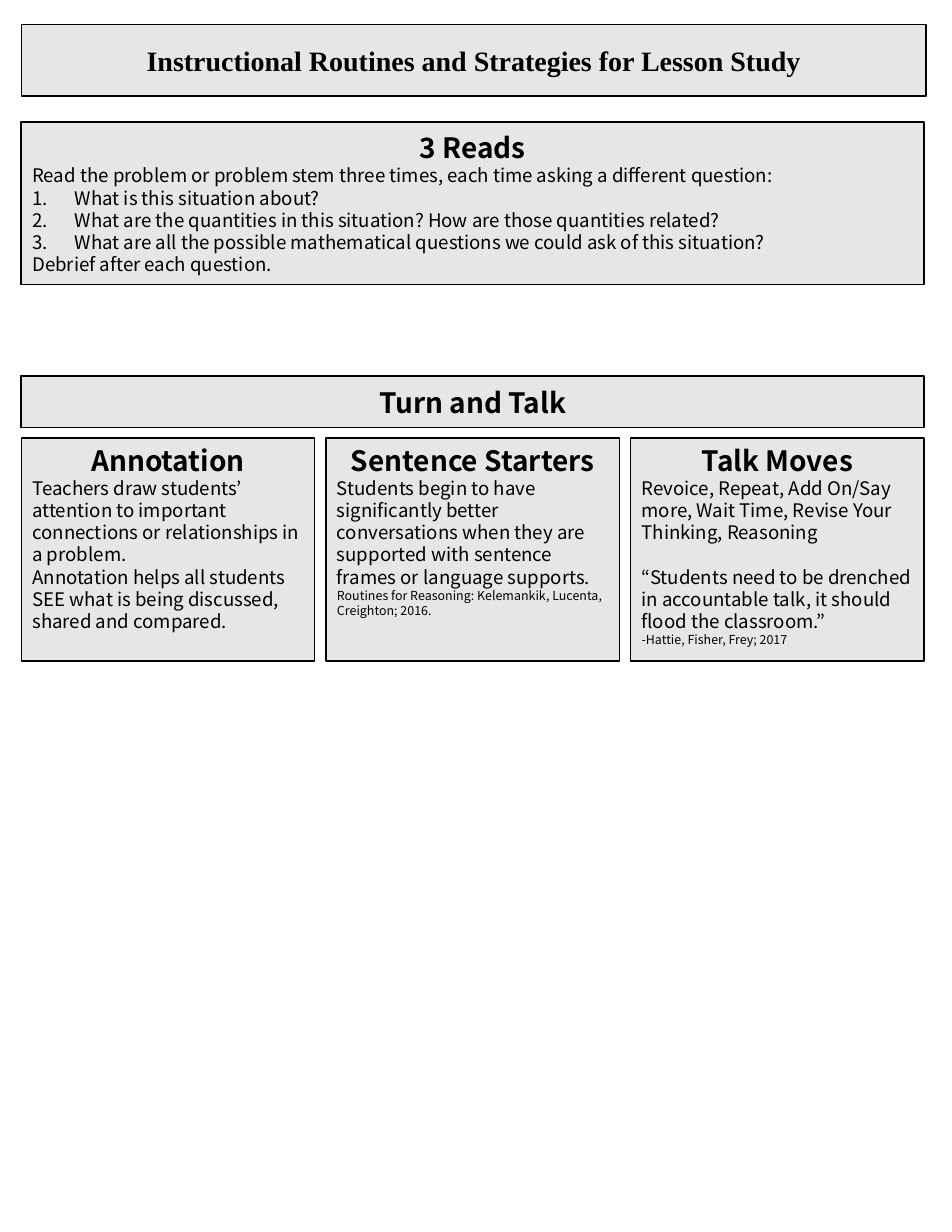
from lxml import etree
from pptx import Presentation
from pptx.dml.color import RGBColor
from pptx.enum.shapes import MSO_SHAPE
from pptx.enum.text import MSO_ANCHOR, PP_ALIGN
from pptx.oxml.ns import qn
from pptx.util import Inches, Pt

RECTANGLE = MSO_SHAPE.RECTANGLE
TOP, MIDDLE = MSO_ANCHOR.TOP, MSO_ANCHOR.MIDDLE
LEFT, CENTER = PP_ALIGN.LEFT, PP_ALIGN.CENTER

SANS, SERIF = "Noto Sans CJK KR", "Times New Roman"
LINE_RATIO = 1.19
MARGIN, WIDTH = 0.19, 8.06
CARD_TOP, CARD_WIDTH, CARD_HEIGHT = 3.91, 2.62, 1.99
CARD_STEP = (WIDTH - CARD_WIDTH) / 2

FORMATS = {
    "title": {"name": SERIF, "size": Pt(18), "bold": True},
    "heading": {"name": SANS, "size": Pt(18), "bold": True},
    "body": {"name": SANS, "size": Pt(12), "bold": False},
    "source": {"name": SANS, "size": Pt(8), "bold": False},
}
FORMATS["step"] = FORMATS["quote"] = FORMATS["body"]

READS = [
    ("heading", "3 Reads"),
    ("body", "Read the problem or problem stem three times, each time asking a different question:"),
    ("step", "What is this situation about?"),
    ("step", "What are the quantities in this situation? How are those quantities related?"),
    ("step", "What are all the possible mathematical questions we could ask of this situation?"),
    ("body", "Debrief after each question."),
]
ANNOTATION = [
    ("heading", "Annotation"),
    ("body", "Teachers draw students’ attention to important connections or relationships in a problem."),
    ("body", "Annotation helps all students SEE what is being discussed, shared and compared."),
]
SENTENCE_STARTERS = [
    ("heading", "Sentence Starters"),
    ("body", "Students begin to have significantly better conversations when they are "
             "supported with sentence frames or language supports."),
    ("source", "Routines for Reasoning: Kelemankik, Lucenta, Creighton; 2016."),
]
TALK_MOVES = [
    ("heading", "Talk Moves"),
    ("body", "Revoice, Repeat, Add On/Say more, Wait Time, Revise Your Thinking, Reasoning"),
    ("quote", "“Students need to be drenched in accountable talk, it should flood the classroom.”"),
    ("source", "-Hattie, Fisher, Frey; 2017"),
]


def color(value):
    return RGBColor.from_string(value)


class Handout:
    fill, ink = "E7E6E6", "000000"

    def __init__(self, slide):
        self.slide = slide

    def panel(self, left, top, width, height, content, anchor=MIDDLE):
        panel = self.slide.shapes.add_shape(
            RECTANGLE, Inches(left), Inches(top), Inches(width), Inches(height))
        panel.shadow.inherit = False
        panel.fill.solid()
        panel.fill.fore_color.rgb = color(self.fill)
        panel.line.color.rgb = color(self.ink)
        panel.line.width = Pt(1)
        frame = panel.text_frame
        frame.word_wrap = True
        frame.vertical_anchor = anchor
        for index, (role, text) in enumerate(content):
            paragraph = frame.add_paragraph() if index else frame.paragraphs[0]
            self.fill_paragraph(paragraph, role, text)

    def fill_paragraph(self, paragraph, role, text):
        style = FORMATS[role]
        line_height = Pt(round(style["size"].pt * LINE_RATIO, 2))
        paragraph.alignment = CENTER if role in ("title", "heading") else LEFT
        if role != "title":
            paragraph.line_spacing = line_height
        if role == "quote":
            paragraph.space_before = line_height
        if role == "step":
            self.number(paragraph)
        run = paragraph.add_run()
        run.text = text
        for attribute, value in style.items():
            setattr(run.font, attribute, value)
        run.font.color.rgb = color(self.ink)
        properties = run._r.get_or_add_rPr()
        for script in ("a:ea", "a:cs"):
            etree.SubElement(properties, qn(script), typeface=style["name"])

    def number(self, paragraph):
        properties = paragraph._p.get_or_add_pPr()
        indent = Inches(0.38)
        properties.set("marL", str(indent))
        properties.set("indent", str(-indent))
        etree.SubElement(properties, qn("a:buFont"), typeface="+mj-lt")
        etree.SubElement(properties, qn("a:buAutoNum"), type="arabicPeriod")


def main():
    deck = Presentation()
    deck.slide_width, deck.slide_height = Inches(8.5), Inches(11)
    handout = Handout(deck.slides.add_slide(deck.slide_layouts[6]))
    handout.panel(MARGIN, 0.22, 8.08, 0.64,
                  [("title", "Instructional Routines and Strategies for Lesson Study")])
    handout.panel(MARGIN, 1.09, WIDTH, 1.45, READS)
    handout.panel(MARGIN, 3.36, WIDTH, 0.46, [("heading", "Turn and Talk")])
    for column, content in enumerate((ANNOTATION, SENTENCE_STARTERS, TALK_MOVES)):
        handout.panel(MARGIN + column * CARD_STEP, CARD_TOP, CARD_WIDTH, CARD_HEIGHT, content, TOP)
    deck.save("out.pptx")


if __name__ == "__main__":
    main()
